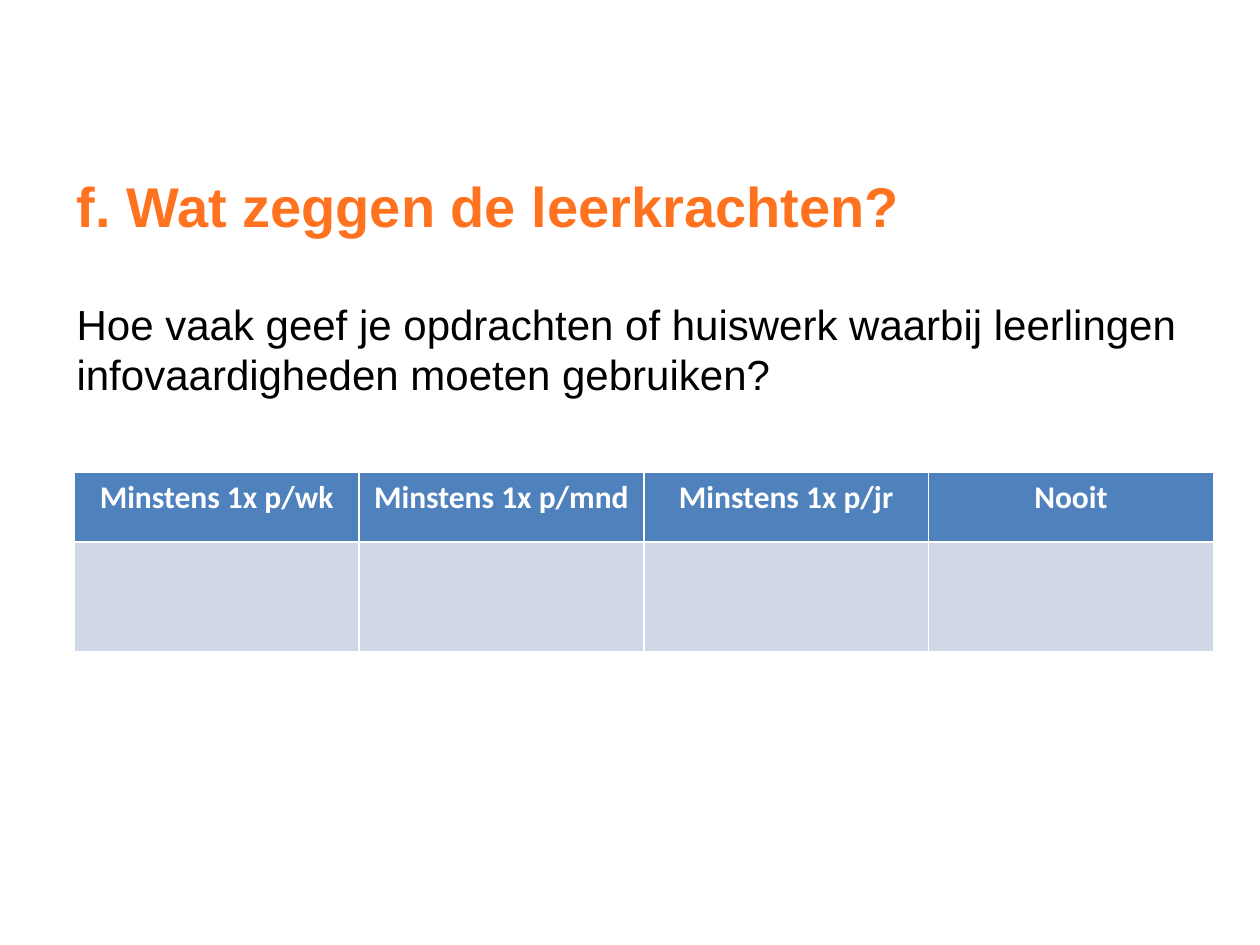
from pptx import Presentation
from pptx.dml.color import RGBColor
from pptx.enum.text import MSO_ANCHOR, PP_ALIGN
from pptx.util import Inches, Pt

ORANGE = RGBColor(0xFF, 0x73, 0x20)
BLACK = RGBColor(0x00, 0x00, 0x00)
WHITE = RGBColor(0xFF, 0xFF, 0xFF)
HEADER_BLUE = RGBColor(0x4F, 0x81, 0xBD)
PALE_BLUE = RGBColor(0xD0, 0xD8, 0xE8)

FREQUENCIES = ["Minstens 1x p/wk", "Minstens 1x p/mnd", "Minstens 1x p/jr", "Nooit"]
COLUMN_WIDTH = 2.26
ROW_HEIGHTS = [0.55, 0.87]


def style_text(para, name, size, color, bold=False):
    for span in para.runs:
        span.font.name = name
        span.font.size = Pt(size)
        span.font.color.rgb = color
        span.font.bold = bold


def add_text(page, text, top, height, size, color, bold=False, anchor=MSO_ANCHOR.TOP):
    box = page.shapes.add_textbox(Inches(0.51), Inches(top), Inches(9), Inches(height))
    frame = box.text_frame
    frame.word_wrap = True
    frame.vertical_anchor = anchor
    frame.text = text
    style_text(frame.paragraphs[0], "Arial", size, color, bold)


def add_answer_table(page):
    """Add a header row of frequencies above an empty row for answers."""
    table = page.shapes.add_table(
        len(ROW_HEIGHTS), len(FREQUENCIES), Inches(0.59), Inches(3.75),
        Inches(COLUMN_WIDTH * len(FREQUENCIES)), Inches(sum(ROW_HEIGHTS))).table
    for row, height in zip(table.rows, ROW_HEIGHTS):
        row.height = Inches(height)
    for index, label in enumerate(FREQUENCIES):
        header, answer = table.cell(0, index), table.cell(1, index)
        for cell, color in ((header, HEADER_BLUE), (answer, PALE_BLUE)):
            cell.fill.solid()
            cell.fill.fore_color.rgb = color
        header.text_frame.text = label
        para = header.text_frame.paragraphs[0]
        para.alignment = PP_ALIGN.CENTER
        style_text(para, "Calibri", 18, WHITE, bold=True)


def main():
    deck = Presentation()
    deck.slide_width, deck.slide_height = Inches(10), Inches(7.5)
    page = deck.slides.add_slide(deck.slide_layouts[6])
    add_text(page, "f. Wat zeggen de leerkrachten?", 1, 1.25, 32, ORANGE,
             bold=True, anchor=MSO_ANCHOR.MIDDLE)
    add_text(page, "Hoe vaak geef je opdrachten of huiswerk waarbij leerlingen "
             "infovaardigheden moeten gebruiken?", 2.32, 4.1, 24, BLACK)
    add_answer_table(page)
    deck.save("out.pptx")


if __name__ == "__main__":
    main()
